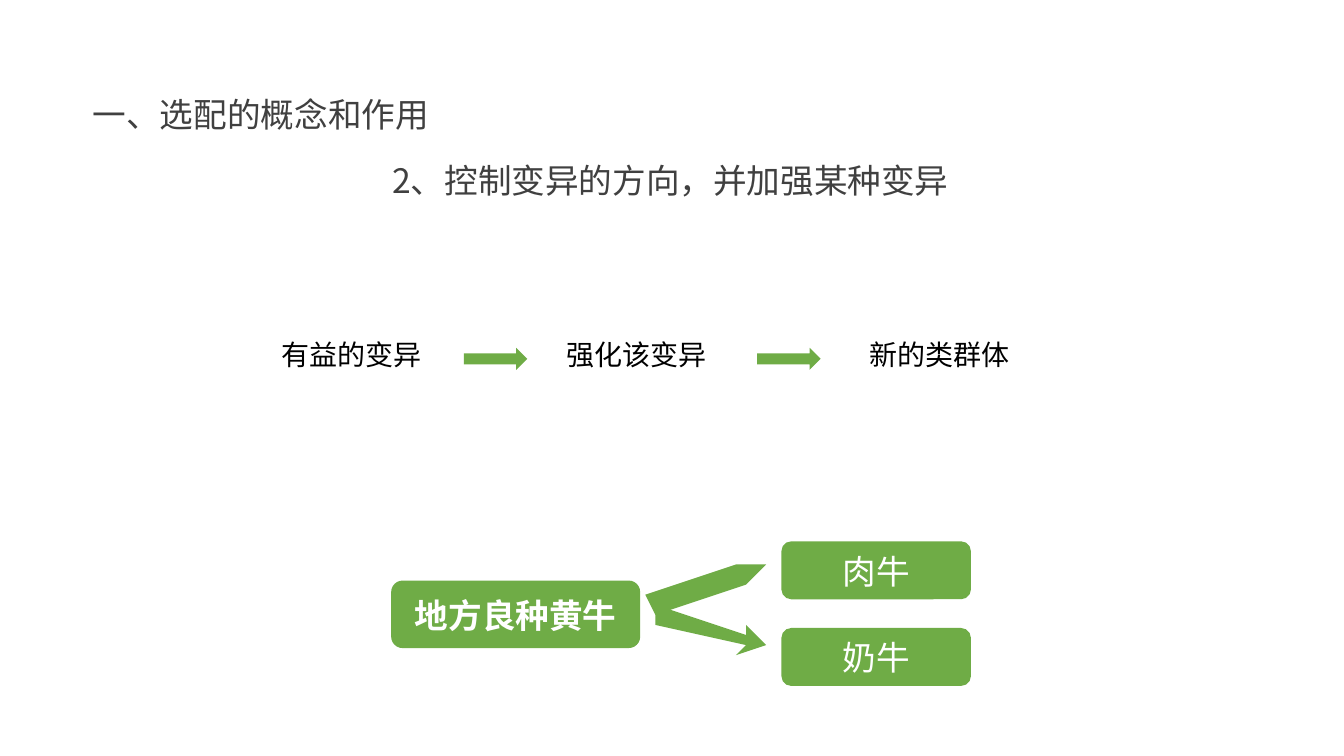
from pptx import Presentation
from pptx.dml.color import RGBColor
from pptx.enum.shapes import MSO_SHAPE
from pptx.enum.text import MSO_ANCHOR, PP_ALIGN
from pptx.oxml.ns import qn
from pptx.util import Inches, Pt
from lxml.etree import SubElement

GREEN, GRAY, BLACK, WHITE = "6FAC46", "404040", "000000", "FFFFFF"


def color(code):
    return RGBColor.from_string(code)


class Board:
    face = "Noto Sans CJK SC"

    def __init__(self, deck):
        self.cell = deck.slide_height // 75
        self.slide = deck.slides.add_slide(deck.slide_layouts[5])

    def span(self, *cells):
        return [round(n * self.cell) for n in cells]

    def letter(self, shape, text, size, code, bold=False,
               align=PP_ALIGN.LEFT, anchor=MSO_ANCHOR.TOP):
        frame = shape.text_frame
        frame.word_wrap = True
        frame.vertical_anchor = anchor
        frame.margin_left = frame.margin_right = frame.margin_bottom = 0
        frame.margin_top = Inches(0.01)
        frame.text = text
        line = frame.paragraphs[0]
        line.alignment = align
        line.space_before = Pt(0)
        font = line.font
        font.size, font.bold, font.name = Pt(size), bold, self.face
        font.color.rgb = color(code)
        east = SubElement(line._p.pPr.find(qn("a:defRPr")), qn("a:ea"))
        east.set("typeface", self.face)

    def title(self, text, *area):
        shape = self.slide.shapes.title
        shape.left, shape.top, shape.width, shape.height = self.span(*area)
        self.letter(shape, text, 24, GRAY, anchor=MSO_ANCHOR.MIDDLE)

    def label(self, text, area, size, code):
        box = self.slide.shapes.add_textbox(*self.span(*area))
        self.letter(box, text, size, code)

    def paint(self, shape):
        shape.shadow.inherit = False
        shape.fill.solid()
        shape.fill.fore_color.rgb = color(GREEN)
        shape.line.fill.background()
        return shape

    def arrow(self, *area):
        self.paint(self.slide.shapes.add_shape(
            MSO_SHAPE.RIGHT_ARROW, *self.span(*area)))

    def card(self, text, area, bold=False):
        shape = self.paint(self.slide.shapes.add_shape(
            MSO_SHAPE.ROUNDED_RECTANGLE, *self.span(*area)))
        shape.adjustments[0] = 0.17
        self.letter(shape, text, 24, WHITE, bold,
                    PP_ALIGN.CENTER, MSO_ANCHOR.MIDDLE)

    def shaft(self, points):
        start, *rest = points
        pen = self.slide.shapes.build_freeform(*start, scale=self.cell)
        pen.add_line_segments(rest, close=True)
        self.paint(pen.convert_to_shape())


def main():
    deck = Presentation()
    deck.slide_width, deck.slide_height = Inches(13.33), Inches(7.5)
    board = Board(deck)
    board.title("一、选配的概念和作用", 9.2, 4, 115, 14.5)
    board.label("2、控制变异的方向，并加强某种变异",
                (38.9, 15.8, 55.6, 4.2), 24, GRAY)

    steps = {"有益的变异": 27.9, "强化该变异": 56.2, "新的类群体": 86.2}
    for text, left in steps.items():
        board.label(text, (left, 33.4, 14.2, 3.6), 20, BLACK)
    for left in (46, 75.1):
        board.arrow(left, 34.5, 6.3, 2.2)

    board.card("地方良种黄牛", (38.8, 57.6, 24.7, 6.7), True)
    for row, text in enumerate(("肉牛", "奶牛")):
        board.card(text, (77.5, 53.7 + 8.6 * row, 18.8, 5.75))
    board.shaft([(73.1, 55.6), (73.3, 56.3), (64.5, 59.2), (64.9, 60.6),
                 (73.8, 57.6), (74, 58.3), (75.8, 56.2)])
    board.shaft([(65, 60.5), (64.6, 61.9), (73.6, 64.5), (73.4, 65.2),
                 (76.1, 64.5), (74.2, 62.4), (74, 63.1)])
    deck.save("out.pptx")


if __name__ == "__main__":
    main()
